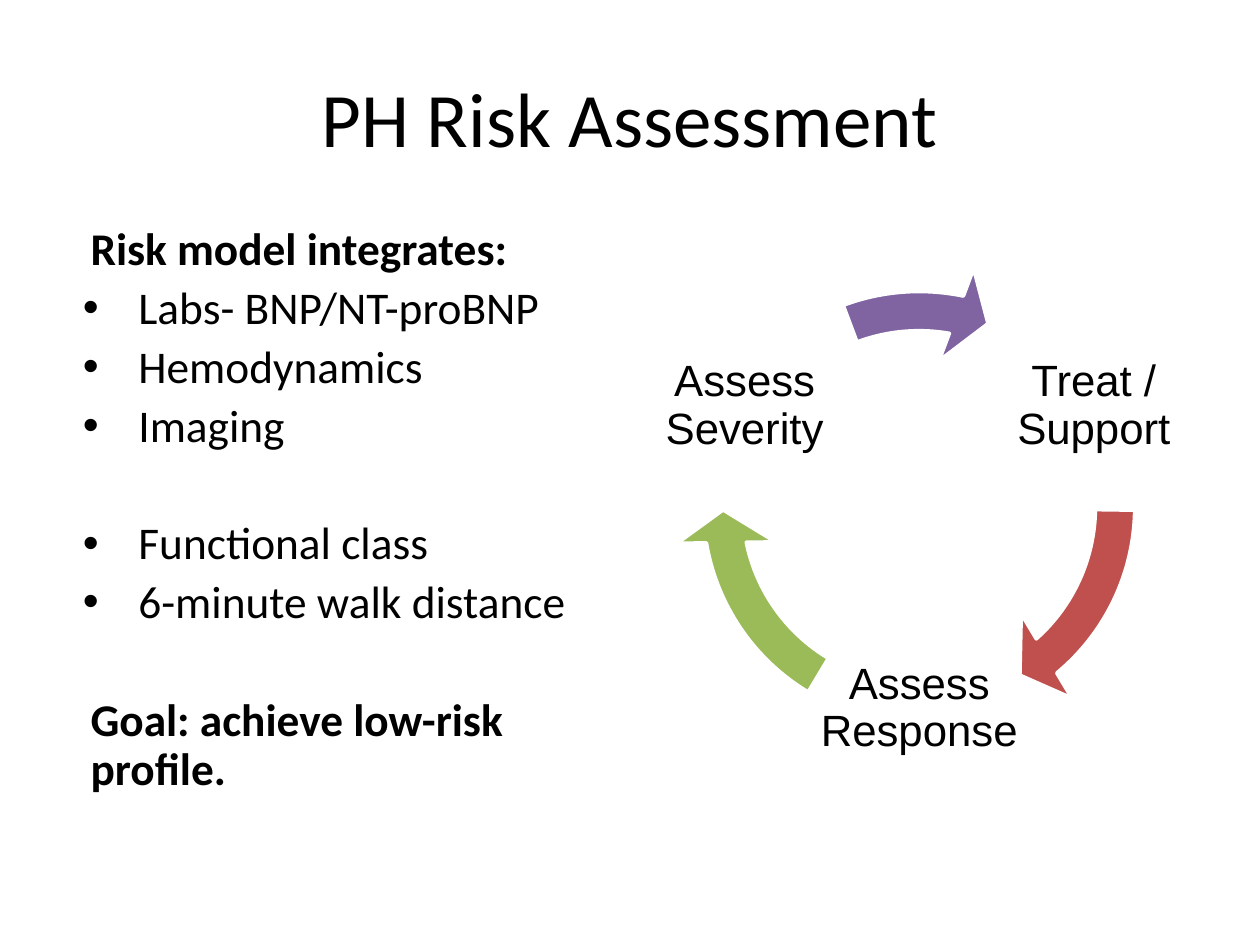
import math
from dataclasses import dataclass

import pptx
import pptx.dml.color
import pptx.enum.shapes
import pptx.enum.text
import pptx.oxml.ns
import pptx.util
from lxml import etree

Pt = pptx.util.Pt
RGB = pptx.dml.color.RGBColor.from_string
ALIGN = pptx.enum.text.PP_ALIGN
ANCHOR = pptx.enum.text.MSO_ANCHOR
qn = pptx.oxml.ns.qn


@dataclass(frozen=True)
class Theme:
    text: str = "000000"
    edge: str = "FFFFFF"
    red: str = "C0504D"
    green: str = "9BBB59"
    purple: str = "8064A2"
    body_font: str = "Calibri"
    cycle_font: str = "Arial"
    title_size: float = 44
    body_size: float = 25.9
    cycle_size: float = 25


theme = Theme()

deck = pptx.Presentation()
deck.slide_width, deck.slide_height = Pt(720), Pt(540)
slide = deck.slides.add_slide(deck.slide_layouts[6])


def add_frame(left, top, width, height, anchor, margins):
    """Add a wrapping text box; margins are (horizontal, vertical) in points."""
    frame = slide.shapes.add_textbox(Pt(left), Pt(top), Pt(width), Pt(height)).text_frame
    across, down = (Pt(margin) for margin in margins)
    settings = dict(word_wrap=True, vertical_anchor=anchor, margin_left=across,
                    margin_right=across, margin_top=down, margin_bottom=down)
    for name, value in settings.items():
        setattr(frame, name, value)
    return frame


def write(paragraph, text, font, size, bold=False, **layout):
    """Fill a paragraph and set its font and paragraph layout."""
    paragraph.text = text
    for name, value in dict(name=font, size=Pt(size), bold=bold).items():
        setattr(paragraph.runs[0].font, name, value)
    paragraph.runs[0].font.color.rgb = RGB(theme.text)
    for name, value in layout.items():
        setattr(paragraph, name, value)


title = add_frame(36, 21.6, 648, 90, ANCHOR.MIDDLE, (7.2, 3.6))
write(title.paragraphs[0], "PH Risk Assessment", theme.body_font, theme.title_size,
      alignment=ALIGN.CENTER)

# Risk model: wording, bulleted, space before
NEAR, GAP = 5.6, 39.2
risk_lines = [
    ("Risk model integrates:", False, 0),
    ("Labs- BNP/NT-proBNP", True, NEAR),
    ("Hemodynamics", True, NEAR),
    ("Imaging", True, NEAR),
    ("Functional class", True, GAP),
    ("6-minute walk distance", True, NEAR),
    ("Goal: achieve low-risk profile.", False, GAP),
]
risk_model = add_frame(36, 126, 318.24, 356.4, ANCHOR.TOP, (7.2, 3.6))
for index, (wording, bulleted, before) in enumerate(risk_lines):
    line = risk_model.paragraphs[0] if index == 0 else risk_model.add_paragraph()
    properties = line._p.get_or_add_pPr()
    indent, hanging = (36, -31.68) if bulleted else (8.64, 0)
    properties.set("marL", str(Pt(indent)))
    properties.set("indent", str(Pt(hanging)))
    if bulleted:
        etree.SubElement(properties, qn("a:buFont"), typeface="Arial")
        etree.SubElement(properties, qn("a:buChar"), char="•")
    else:
        etree.SubElement(properties, qn("a:buNone"))
    write(line, wording, theme.body_font, theme.body_size, bold=not bulleted,
          line_spacing=0.9, space_before=Pt(before))

# Cycle: step, its angle, colour of the arrow leaving it, arrow end and start angles
CENTRE_X, CENTRE_Y, RADIUS = 525.24, 289.8, 115.2
STEP_SIDE, ARROW_SIDE = 118.8, 280
DEGREE = 0.6  # angle adjustments count 60000 to a degree, in units of 100000
cycle = [
    ("Treat / Support", -30, theme.red, 49.44, 0.83),
    ("Assess Response", 90, theme.green, 169.58, 120.97),
    ("Assess Severity", 210, theme.purple, 280.98, 249.42),
]
for step, angle, colour, arrow_end, arrow_start in cycle:
    x = CENTRE_X + RADIUS * math.cos(math.radians(angle))
    y = CENTRE_Y + RADIUS * math.sin(math.radians(angle))
    label = add_frame(x - STEP_SIDE / 2, y - STEP_SIDE / 2, STEP_SIDE, STEP_SIDE,
                      ANCHOR.MIDDLE, (2.2, 2.2))
    write(label.paragraphs[0], step, theme.cycle_font, theme.cycle_size,
          alignment=ALIGN.CENTER, line_spacing=0.9)

    arrow = slide.shapes.add_shape(
        pptx.enum.shapes.MSO_SHAPE.CIRCULAR_ARROW,
        Pt(CENTRE_X - ARROW_SIDE / 2), Pt(CENTRE_Y - ARROW_SIDE / 2),
        Pt(ARROW_SIDE), Pt(ARROW_SIDE))
    arrow.shadow.inherit = False
    shape_values = [0.08, 9.59 * DEGREE, arrow_end * DEGREE, arrow_start * DEGREE, 0.1]
    for index, value in enumerate(shape_values):
        arrow.adjustments[index] = value
    arrow.fill.solid()
    arrow.fill.fore_color.rgb = RGB(colour)
    arrow.line.color.rgb = RGB(theme.edge)
    arrow.line.width = Pt(2)

deck.save("out.pptx")
